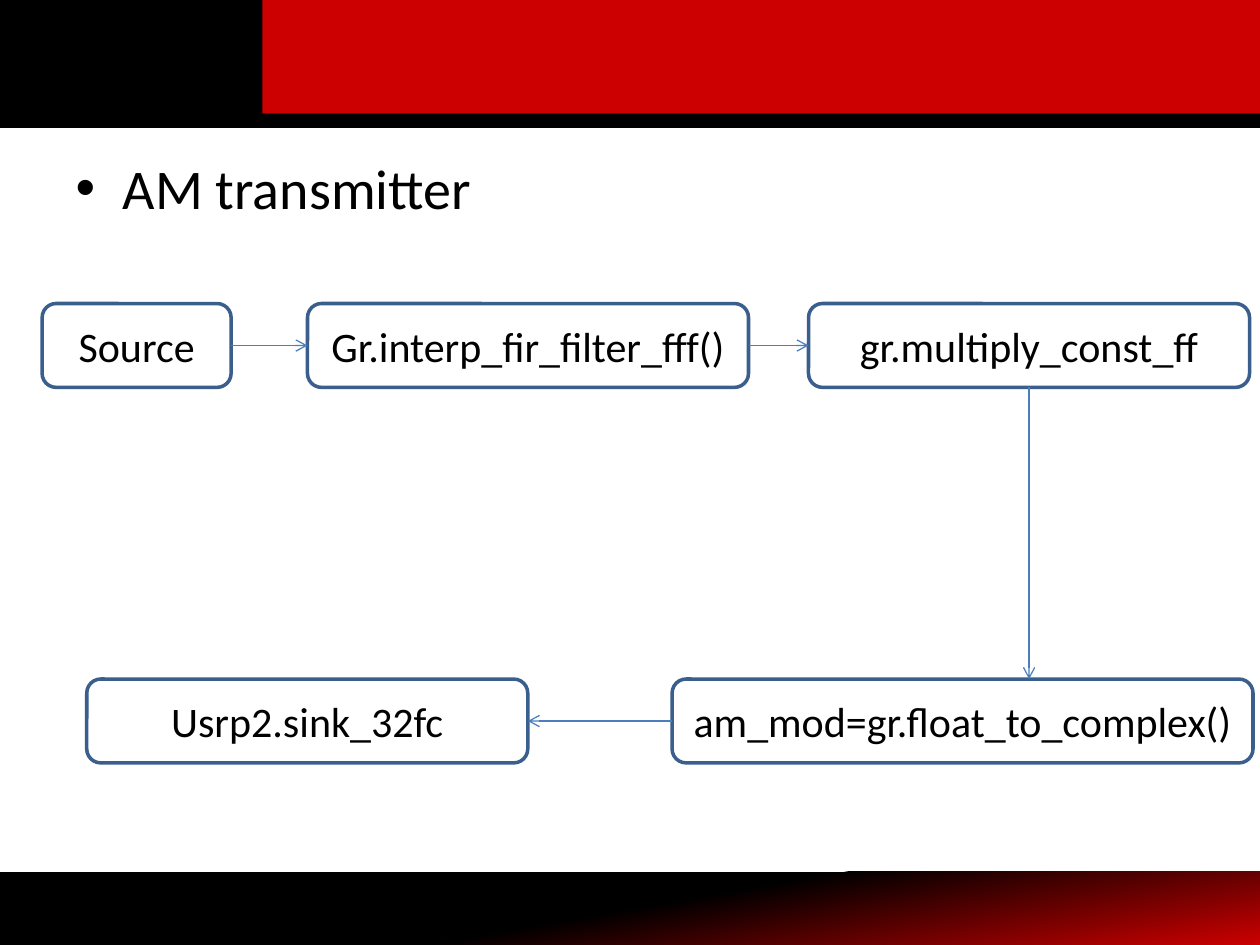
from lxml import etree
from pptx import Presentation
from pptx import util as u
from pptx.dml.color import RGBColor
from pptx.enum import shapes, text
from pptx.oxml.ns import qn

BLACK = RGBColor(0x00, 0x00, 0x00)
RED = RGBColor(0xCC, 0x00, 0x00)
EDGE = RGBColor(0x3A, 0x5F, 0x8C)
WIRE = RGBColor(0x4B, 0x7E, 0xBC)
WIDE, HIGH = 25.4, 19.05
NODE_H = 1.69


def style(run, size):
    """Apply the slide font to a run."""
    for key, val in {"name": "Calibri", "size": u.Pt(size)}.items():
        setattr(run.font, key, val)
    run.font.color.rgb = BLACK


def block(slide, kind, box):
    """Add a shape without shadow, fill or line."""
    shape = slide.shapes.add_shape(kind, *map(u.Cm, box))
    shape.shadow.inherit = False
    shape.fill.background()
    shape.line.fill.background()
    return shape


def header(slide, box):
    """Place the black band and its red panel."""
    left, top, width, height = box
    inset = 5.29
    band = block(slide, shapes.MSO_SHAPE.RECTANGLE, box)
    panel = block(slide, shapes.MSO_SHAPE.RECTANGLE,
                  (left + inset, top, width - inset, height - 0.25))
    for part, color in ((band, BLACK), (panel, RED)):
        part.fill.solid()
        part.fill.fore_color.rgb = color
    band.line.color.rgb = BLACK
    band.line.width = u.Pt(2)


def footer(slide, box):
    """Place the band that fades from black to red."""
    fill = block(slide, shapes.MSO_SHAPE.RECTANGLE, box).fill
    fill.gradient()
    fill.gradient_angle = 280
    for stop, (place, color) in zip(fill.gradient_stops, ((0.5, BLACK), (1, RED))):
        stop.position = place
        stop.color.rgb = color


def body(slide, box, words):
    """Move and fill the bullet placeholder."""
    holder = slide.placeholders[1]
    for key, val in zip(("left", "top", "width", "height"), box):
        setattr(holder, key, u.Cm(val))
    run = holder.text_frame.paragraphs[0].add_run()
    run.text = words
    style(run, 32)


def node(slide, box, words):
    """Add one outlined, labelled step."""
    shape = block(slide, shapes.MSO_SHAPE.ROUNDED_RECTANGLE, box)
    shape.line.color.rgb = EDGE
    shape.line.width = u.Pt(2)
    frame = shape.text_frame
    for key, val in {"word_wrap": True, "vertical_anchor": text.MSO_ANCHOR.MIDDLE}.items():
        setattr(frame, key, val)
    par = frame.paragraphs[0]
    par.alignment = text.PP_ALIGN.CENTER
    run = par.add_run()
    run.text = words
    style(run, 24)
    return shape


def arrow(slide, start, side, end, goal=None):
    """Join two steps, or drop straight down when no goal side is given."""
    drop = start.left + start.width // 2
    line = slide.shapes.add_connector(
        shapes.MSO_CONNECTOR.STRAIGHT, drop, start.top + start.height, drop, end.top)
    line.begin_connect(start, side)
    if goal is not None:
        line.end_connect(end, goal)
    line.line.color.rgb = WIRE
    line.line.width = u.Pt(0.75)
    etree.SubElement(line.line._get_or_add_ln(), qn("a:tailEnd"), type="arrow")
    etree.SubElement(line._element.spPr, qn("a:effectLst"))


def flow(slide, box):
    """Lay out the signal chain in two rows."""
    left, top, width, height = box
    low = height - NODE_H
    steps = (
        (0, 0, 3.81, "Source"),
        (5.35, 0, 8.89, "Gr.interp_fir_filter_fff()"),
        (15.45, 0, 8.89, "gr.multiply_const_ff"),
        (width - 11.71, low, 11.71, "am_mod=gr.float_to_complex()"),
        (0.9, low, 8.89, "Usrp2.sink_32fc"),
    )
    source, interp, scale, mod, sink = [
        node(slide, (left + x, top + y, wide, NODE_H), words)
        for x, y, wide, words in steps]
    arrow(slide, source, 3, interp, 1)
    arrow(slide, interp, 3, scale, 1)
    arrow(slide, scale, 2, mod)
    arrow(slide, mod, 1, sink, 3)


def main():
    """Build and save the slide."""
    deck = Presentation()
    deck.slide_width, deck.slide_height = u.Cm(WIDE), u.Cm(HIGH)
    slide = deck.slides.add_slide(deck.slide_layouts[1])
    title = slide.shapes.title._element
    title.getparent().remove(title)
    footer(slide, (0, 17.57, WIDE, 1.48))
    header(slide, (0, 0, WIDE, 2.54))
    body(slide, (1.27, 2.96, 22.86, 14.05), "AM transmitter")
    flow(slide, (0.85, 6.12, 24.41, 9.26))
    deck.save("out.pptx")


if __name__ == "__main__":
    main()
